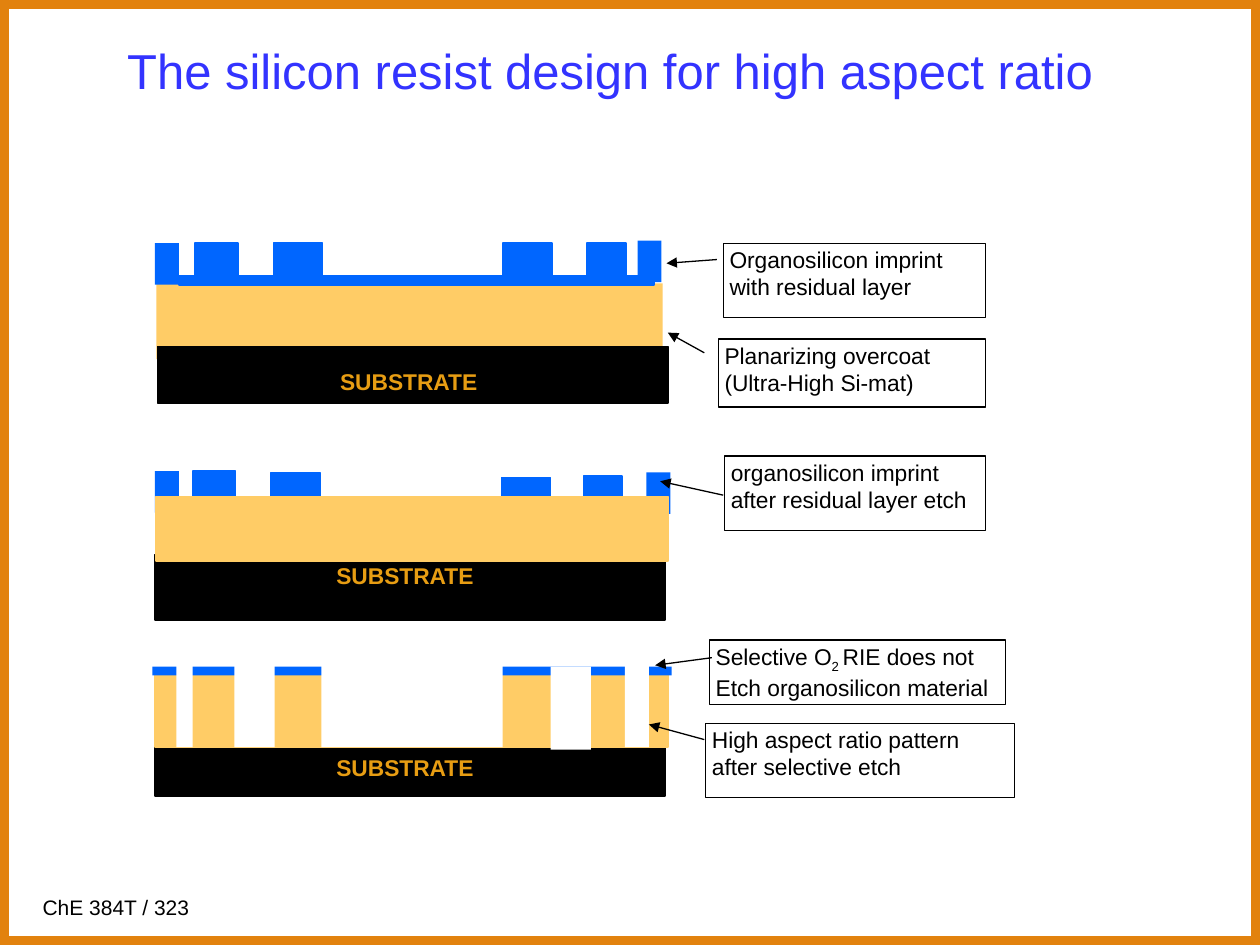
from dataclasses import dataclass
from typing import NamedTuple, Optional

import lxml.etree
import pptx
import pptx.dml.color
import pptx.enum.shapes
import pptx.enum.text
import pptx.oxml.ns
import pptx.util

Inches = pptx.util.Inches


@dataclass(frozen=True)
class Theme:
    font: str = "Arial"
    border: str = "E2820E"
    title: str = "3333FF"
    text: str = "000000"
    label: str = "E79D13"
    resist: str = "0066FF"
    overcoat: str = "FFCC66"
    substrate: str = "000000"
    etched: str = "FFFFFF"
    title_size: float = 28
    body_size: float = 13
    footer_size: float = 12
    border_width: float = 10
    layer_line: float = 1
    thin_line: float = 0.75


class Box(NamedTuple):
    left: float
    top: float
    width: float
    height: float


class Layer(NamedTuple):
    box: Box
    color: str
    outlined: bool = False


class Run(NamedTuple):
    text: str
    subscript: bool = False


class Callout(NamedTuple):
    box: Box
    paragraphs: list[list[Run]]


class Arrow(NamedTuple):
    start: tuple[float, float]
    tip: tuple[float, float]


THEME = Theme()


def resist_row(tops: list[float], columns: list[tuple[float, float]],
               bottom: float) -> list[Layer]:
    """Resist blocks standing on a common bottom edge."""
    return [Layer(Box(left, top, width, bottom - top), THEME.resist, True)
            for top, (left, width) in zip(tops, columns)]


# Stage 1: imprint with residual layer on the overcoat
IMPRINTED = [
    *resist_row([1.93] * 4, [(1.55, 0.34), (2.17, 0.39), (3.99, 0.39), (4.66, 0.31)], 2.25),
    Layer(Box(1.24, 2.25, 4.02, 0.6), THEME.overcoat),
    Layer(Box(1.42, 2.19, 3.77, 0.07), THEME.resist, True),
    Layer(Box(1.25, 2.75, 4.05, 0.45), THEME.substrate, True),
    Layer(Box(1.23, 1.93, 0.19, 0.33), THEME.resist),
    Layer(Box(5.06, 1.91, 0.19, 0.33), THEME.resist),
]

# Stage 2: residual layer etched away
RESIDUAL_ETCHED = [
    *resist_row([3.74, 3.75, 3.79, 3.78],
                [(1.53, 0.34), (2.15, 0.39), (3.98, 0.39), (4.63, 0.31)], 4),
    Layer(Box(1.23, 3.74, 0.19, 0.33), THEME.resist),
    Layer(Box(5.13, 3.75, 0.19, 0.33), THEME.resist),
    Layer(Box(1.23, 4.4, 4.05, 0.52), THEME.substrate, True),
    Layer(Box(1.24, 3.94, 4.06, 0.51), THEME.overcoat, True),
]

# Stage 3: trenches etched through the capped overcoat
TRENCHES = [(1.4, 0.13, 5.27), (1.86, 0.32, 5.27), (2.55, 1.44, 5.27),
            (4.37, 0.32, 5.29), (4.96, 0.19, 5.27)]
PATTERN_ETCHED = [
    Layer(Box(1.23, 5.81, 4.05, 0.51), THEME.substrate, True),
    Layer(Box(1.23, 5.34, 4.07, 0.59), THEME.overcoat, True),
    Layer(Box(1.21, 5.29, 4.12, 0.07), THEME.resist),
    *[Layer(Box(left, top, width, 0.66), THEME.etched) for left, width, top in TRENCHES],
]

SUBSTRATE_LABELS = [(2.63, 2.89), (2.6, 4.43), (2.6, 5.95)]

CALLOUTS = [
    Callout(Box(5.74, 1.93, 2.08, 0.59), [[Run("Organosilicon imprint with residual layer")]]),
    Callout(Box(5.7, 2.69, 2.12, 0.54),
            [[Run("Planarizing overcoat")], [Run("(Ultra-High Si-mat)")]]),
    Callout(Box(5.75, 3.62, 2.07, 0.59),
            [[Run("organosilicon imprint after residual layer etch")]]),
    Callout(Box(5.63, 5.08, 2.35, 0.51),
            [[Run("Selective O"), Run("2 ", True), Run("RIE does not")],
             [Run("Etch organosilicon material")]]),
    Callout(Box(5.6, 5.74, 2.45, 0.59),
            [[Run("High aspect ratio pattern")], [Run("after selective etch")]]),
]

ARROWS = [
    Arrow((5.69, 2.06), (5.29, 2.09)),
    Arrow((5.59, 2.8), (5.3, 2.64)),
    Arrow((5.74, 3.93), (5.24, 3.82)),
    Arrow((5.65, 5.22), (5.2, 5.28)),
    Arrow((5.59, 5.87), (5.15, 5.75)),
]


def rgb(color: str) -> pptx.dml.color.RGBColor:
    return pptx.dml.color.RGBColor.from_string(color)


def add_rectangle(slide, box: Box, fill: Optional[str] = None,
                  line: Optional[str] = None, line_width: float = THEME.layer_line):
    shape = slide.shapes.add_shape(pptx.enum.shapes.MSO_SHAPE.RECTANGLE,
                                   *[Inches(length) for length in box])
    shape.shadow.inherit = False
    if fill:
        shape.fill.solid()
        shape.fill.fore_color.rgb = rgb(fill)
    else:
        shape.fill.background()
    if line:
        shape.line.color.rgb = rgb(line)
        shape.line.width = pptx.util.Pt(line_width)
    else:
        shape.line.fill.background()
    return shape


def write_text(frame, paragraphs: list[list[Run]], size: float, color: str,
               bold: bool = False) -> None:
    for index, runs in enumerate(paragraphs):
        paragraph = frame.add_paragraph() if index else frame.paragraphs[0]
        paragraph.alignment = pptx.enum.text.PP_ALIGN.LEFT
        for part in runs:
            run = paragraph.add_run()
            run.text = part.text
            run.font.name = THEME.font
            run.font.size = pptx.util.Pt(size)
            run.font.bold = bold
            run.font.color.rgb = rgb(color)
            if part.subscript:
                run.font._element.set("baseline", "-25000")


def set_frame(frame, side: float, edge: float, anchor=pptx.enum.text.MSO_ANCHOR.TOP) -> None:
    frame.word_wrap = True
    frame.vertical_anchor = anchor
    frame.margin_left = frame.margin_right = Inches(side)
    frame.margin_top = frame.margin_bottom = Inches(edge)


def add_text(slide, box: Box, text: str, size: float, color: str,
             side: float, edge: float, bold: bool = False) -> None:
    frame = slide.shapes.add_textbox(*[Inches(length) for length in box]).text_frame
    set_frame(frame, side, edge)
    write_text(frame, [[Run(text)]], size, color, bold)


def add_callout(slide, callout: Callout) -> None:
    shape = add_rectangle(slide, callout.box, line=THEME.text, line_width=THEME.thin_line)
    set_frame(shape.text_frame, 0.05, 0.02)
    write_text(shape.text_frame, callout.paragraphs, THEME.body_size, THEME.text)


def add_arrow(slide, arrow: Arrow) -> None:
    connector = slide.shapes.add_connector(
        pptx.enum.shapes.MSO_CONNECTOR.STRAIGHT,
        *[Inches(length) for length in (*arrow.start, *arrow.tip)])
    connector.line.color.rgb = rgb(THEME.text)
    connector.line.width = pptx.util.Pt(THEME.thin_line)
    qn = pptx.oxml.ns.qn
    lxml.etree.SubElement(connector.line._get_or_add_ln(), qn("a:tailEnd"), type="triangle")
    lxml.etree.SubElement(connector._element.spPr, qn("a:effectLst"))


def add_title(slide, box: Box, text: str) -> None:
    title = slide.shapes.title
    title.left, title.top, title.width, title.height = [Inches(length) for length in box]
    set_frame(title.text_frame, 0.1, 0.05, pptx.enum.text.MSO_ANCHOR.MIDDLE)
    write_text(title.text_frame, [[Run(text)]], THEME.title_size, THEME.title)


def main() -> None:
    presentation = pptx.Presentation()
    presentation.slide_width, presentation.slide_height = Inches(10), Inches(7.5)
    slide = presentation.slides.add_slide(presentation.slide_layouts[5])

    # Frame, footer and title
    add_rectangle(slide, Box(0, 0, 10, 7.5), line=THEME.border, line_width=THEME.border_width)
    add_text(slide, Box(0.24, 7.05, 2.86, 0.3), "ChE 384T / 323",
             THEME.footer_size, THEME.text, 0.1, 0.05)
    add_title(slide, Box(0.91, 0.22, 8.94, 0.67),
              "The silicon resist design for high aspect ratio")

    # Process stages
    for layer in IMPRINTED + RESIDUAL_ETCHED + PATTERN_ETCHED:
        add_rectangle(slide, layer.box, layer.color, layer.color if layer.outlined else None)
    for left, top in SUBSTRATE_LABELS:
        add_text(slide, Box(left, top, 1.34, 0.32), "SUBSTRATE",
                 THEME.body_size, THEME.label, 0.07, 0.03, bold=True)

    # Explanations
    for callout in CALLOUTS:
        add_callout(slide, callout)
    for arrow in ARROWS:
        add_arrow(slide, arrow)

    presentation.save("out.pptx")


if __name__ == "__main__":
    main()
